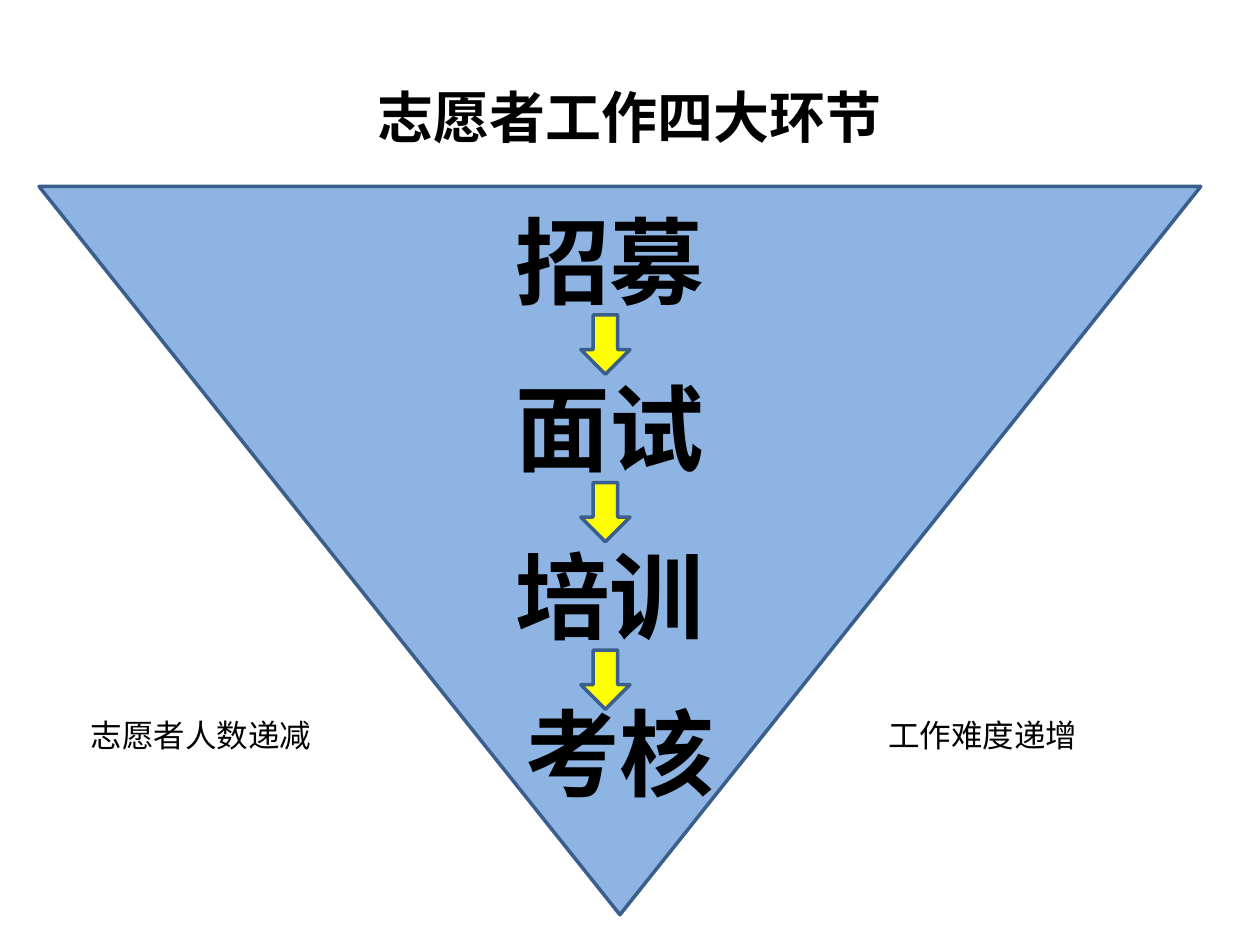
from pptx import Presentation
from pptx.dml.color import RGBColor
from pptx.enum.shapes import MSO_SHAPE
from pptx.enum.text import MSO_ANCHOR, PP_ALIGN
from pptx.util import Inches, Pt

TRIANGLE = MSO_SHAPE.ISOSCELES_TRIANGLE
DOWN_ARROW = MSO_SHAPE.DOWN_ARROW
MIDDLE = MSO_ANCHOR.MIDDLE
TOP = MSO_ANCHOR.TOP
CENTER = PP_ALIGN.CENTER
LEFT = PP_ALIGN.LEFT


def add_filled_shape(kind, left, top, width, height, fill):
    shape = slide.shapes.add_shape(kind, Inches(left), Inches(top), Inches(width), Inches(height))
    shape.shadow.inherit = False
    shape.fill.solid()
    shape.fill.fore_color.rgb = RGBColor.from_string(fill)
    shape.line.color.rgb = RGBColor.from_string("3A5F8C")
    shape.line.width = Pt(2)
    return shape


def add_text(text, left, top, width, height, size, bold, alignment, anchor=TOP, wrap=True):
    box = slide.shapes.add_textbox(Inches(left), Inches(top), Inches(width), Inches(height))
    frame = box.text_frame
    frame.word_wrap = wrap
    frame.vertical_anchor = anchor
    paragraph = frame.paragraphs[0]
    paragraph.text = text
    paragraph.alignment = alignment
    paragraph.font.name = "Calibri"
    paragraph.font.size = Pt(size)
    paragraph.font.bold = bold
    paragraph.font.color.rgb = RGBColor.from_string("000000")


presentation = Presentation()
presentation.slide_width = Inches(10)
presentation.slide_height = Inches(7.5)
slide = presentation.slides.add_slide(presentation.slide_layouts[6])

funnel = add_filled_shape(TRIANGLE, 0.31, 1.48, 9.22, 5.78, "8EB4E3")
funnel.rotation = 180

stages = [("招募", 3.98, 1.56), ("面试", 3.98, 2.89), ("培训", 3.98, 4.22), ("考核", 4.06, 5.47)]
for name, left, top in stages:
    add_text(name, left, top, 1.72, 1.01, 54, True, CENTER, wrap=False)

for step in range(len(stages) - 1):
    add_filled_shape(DOWN_ARROW, 4.61, 2.5 + 1.33 * step, 0.39, 0.47, "FFFF00")

add_text("志愿者工作四大环节", 0.5, 0.3, 9, 1.25, 32, True, CENTER, anchor=MIDDLE)

for label, left, width in [("志愿者人数递减", 0.62, 2.19), ("工作难度递增", 6.95, 1.72)]:
    add_text(label, left, 5.63, width, 0.4, 18, False, LEFT)

presentation.save("out.pptx")
